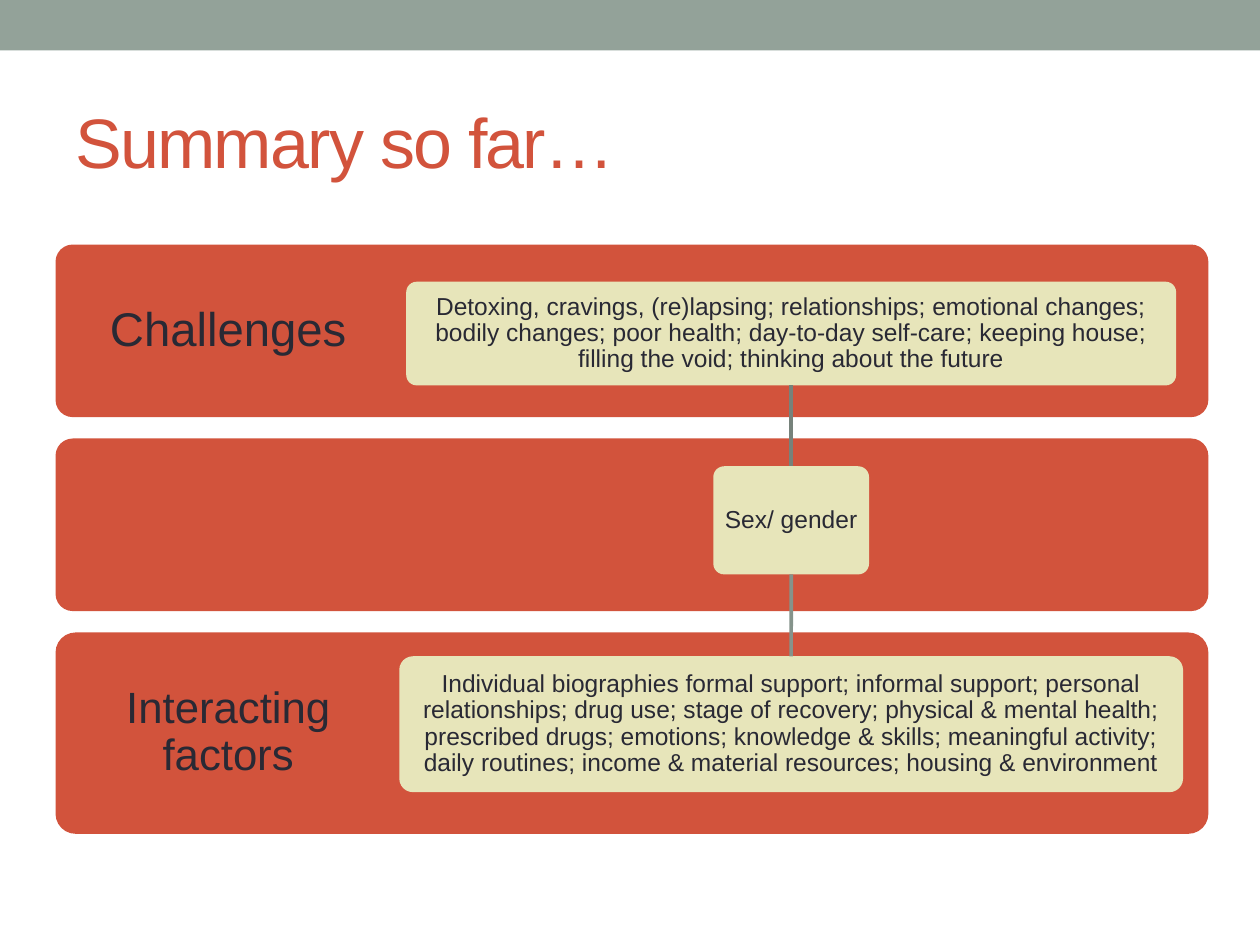
"""Build the summary slide linking recovery challenges to interacting factors."""
import pptx
import pptx.dml.color
import pptx.enum.shapes
import pptx.enum.text
import pptx.oxml.ns
import pptx.util
from lxml import etree

Cm = pptx.util.Cm
Pt = pptx.util.Pt
RGBColor = pptx.dml.color.RGBColor
SHAPE = pptx.enum.shapes.MSO_SHAPE
ALIGN = pptx.enum.text.PP_ALIGN
ANCHOR = pptx.enum.text.MSO_ANCHOR

SAGE = RGBColor(0x93, 0xA2, 0x99)
BRICK = RGBColor(0xD2, 0x53, 0x3C)
CREAM = RGBColor(0xE7, 0xE5, 0xBA)
INK = RGBColor(0x29, 0x29, 0x34)
UPPER_LINK = RGBColor(0x76, 0x82, 0x7B)
LOWER_LINK = RGBColor(0x85, 0x93, 0x8B)

FONT = "Arial"
BAND_LEFT, BAND_WIDTH = 1.12, 23.24
LABEL_WIDTH = 6.96
BOX_CENTRE = 15.95

CHALLENGES = (
    "Detoxing, cravings, (re)lapsing; relationships; emotional changes; "
    "bodily changes; poor health; day-to-day self-care; keeping house; "
    "filling the void; thinking about the future"
)
FACTORS = (
    "Individual biographies formal support; informal support; personal "
    "relationships; drug use; stage of recovery; physical & mental health; "
    "prescribed drugs; emotions; knowledge & skills; meaningful activity; "
    "daily routines; income & material resources; housing & environment"
)


def write_text(shape, text, size, colour, inset, align=ALIGN.CENTER, spacing=0.9):
    frame = shape.text_frame
    frame.text = text
    frame.word_wrap = True
    frame.auto_size = pptx.enum.text.MSO_AUTO_SIZE.NONE
    frame.vertical_anchor = ANCHOR.MIDDLE
    frame.margin_left = frame.margin_right = Cm(inset)
    frame.margin_top = frame.margin_bottom = Cm(inset)
    paragraph = frame.paragraphs[0]
    paragraph.alignment = align
    paragraph.line_spacing = spacing
    font = paragraph.runs[0].font
    font.name, font.size = FONT, Pt(size)
    font.color.rgb = colour


def add_block(slide, kind, left, top, width, height, colour):
    block = slide.shapes.add_shape(kind, Cm(left), Cm(top), Cm(width), Cm(height))
    block.shadow.inherit = False
    block.fill.solid()
    block.fill.fore_color.rgb = colour
    block.line.fill.background()
    if kind == SHAPE.ROUNDED_RECTANGLE:
        block.adjustments[0] = 0.1
    return block


def add_title(slide, text):
    title = slide.shapes.title
    title.left, title.top = Cm(1.27), Cm(1.47)
    title.width, title.height = Cm(22.86), Cm(2.74)
    write_text(title, text, 40, BRICK, 0.25, ALIGN.LEFT, 1.0)
    title.text_frame.paragraphs[0].runs[0].font._element.set("spc", "-100")


def add_band(slide, top, height, label="", size=0):
    add_block(slide, SHAPE.ROUNDED_RECTANGLE, BAND_LEFT, top, BAND_WIDTH, height, BRICK)
    if label:
        caption = slide.shapes.add_textbox(
            Cm(BAND_LEFT), Cm(top), Cm(LABEL_WIDTH), Cm(height))
        write_text(caption, label, size, INK, 0.5)


def add_box(slide, top, width, height, text):
    box = add_block(slide, SHAPE.ROUNDED_RECTANGLE,
                    BOX_CENTRE - width / 2, top, width, height, CREAM)
    write_text(box, text, 14, INK, 0.08)
    return box


def add_link(slide, upper, lower, colour):
    link = slide.shapes.add_connector(
        pptx.enum.shapes.MSO_CONNECTOR.STRAIGHT, 0, 0, 0, 0)
    link.begin_connect(upper, 2)
    link.end_connect(lower, 0)
    link.line.color.rgb = colour
    link.line.width = Pt(2.08)
    etree.SubElement(link._element.spPr, pptx.oxml.ns.qn("a:effectLst"))


def main():
    deck = pptx.Presentation()
    deck.slide_width, deck.slide_height = Cm(25.4), Cm(19.05)
    slide = deck.slides.add_slide(deck.slide_layouts[5])

    add_block(slide, SHAPE.RECTANGLE, 0, 0, 25.4, 1.02, SAGE)
    add_title(slide, "Summary so far…")

    add_band(slide, 12.75, 4.06, "Interacting factors", 25)
    add_band(slide, 8.84, 3.48)
    add_band(slide, 4.93, 3.48, "Challenges", 27)

    challenges = add_box(slide, 5.68, 15.52, 2.09, CHALLENGES)
    gender = add_box(slide, 9.4, 3.14, 2.18, "Sex/ gender")
    factors = add_box(slide, 13.23, 15.8, 2.74, FACTORS)
    add_link(slide, challenges, gender, UPPER_LINK)
    add_link(slide, gender, factors, LOWER_LINK)

    deck.save("out.pptx")


if __name__ == "__main__":
    main()
